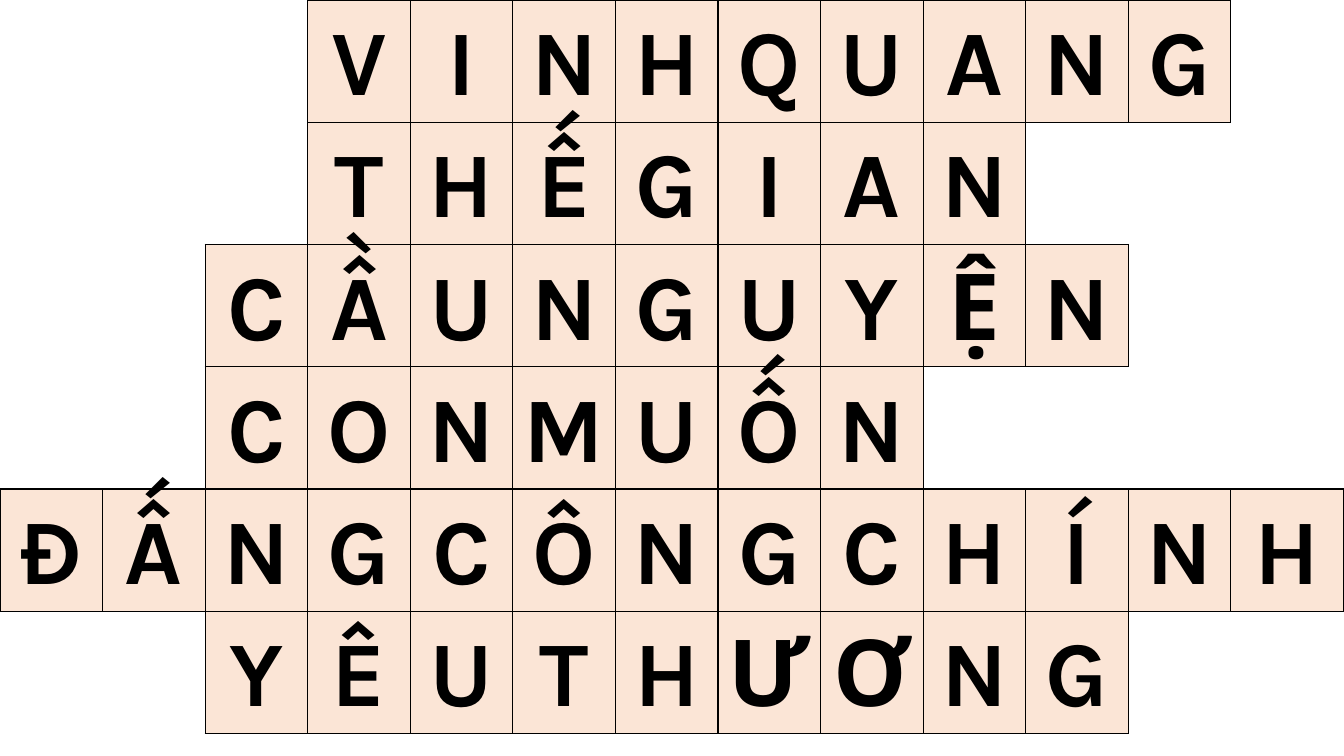
from dataclasses import dataclass

from lxml import etree
from pptx import Presentation
from pptx.dml.color import RGBColor
from pptx.enum.text import MSO_ANCHOR, PP_ALIGN
from pptx.oxml.ns import qn
from pptx.table import _Cell
from pptx.util import Inches, Pt

CENTER = PP_ALIGN.CENTER
MIDDLE = MSO_ANCHOR.MIDDLE


@dataclass(frozen=True)
class Theme:
    font: str = "Karla"
    letter_size: int = 66
    border_width: int = 1
    ink: str = "000000"
    letter_fill: str = "FBE5D6"
    blank_fill: str = "FFFFFF"


@dataclass(frozen=True)
class Answer:
    start: int  # first column used
    letters: str


THEME = Theme()
ANSWERS = [
    Answer(3, "VINHQUANG"),
    Answer(3, "THẾGIAN"),
    Answer(2, "CẦUNGUYỆN"),
    Answer(2, "CONMUỐN"),
    Answer(0, "ĐẤNGCÔNGCHÍNH"),
    Answer(2, "YÊUTHƯƠNG"),
]
SLIDE_W, SLIDE_H = 13.33, 7.5
TABLE_H = 7.28
COLS = 13
LAST_COL_W = 1.12
COL_W = (SLIDE_W - LAST_COL_W) / (COLS - 1)
ROW_H = TABLE_H / len(ANSWERS)
# Border tag -> row and column step to the neighbouring cell
SIDES = {"a:lnL": (0, -1), "a:lnR": (0, 1), "a:lnT": (-1, 0), "a:lnB": (1, 0)}


def letter_at(row: int, col: int) -> str:
    """Return the letter in a square, or an empty string."""
    if not 0 <= row < len(ANSWERS):
        return ""
    answer = ANSWERS[row]
    i = col - answer.start
    return answer.letters[i] if 0 <= i < len(answer.letters) else ""


def add_border(cell: _Cell, tag: str, visible: bool) -> None:
    ln = etree.SubElement(cell._tc.get_or_add_tcPr(), qn(tag))
    ln.set("w", str(Pt(THEME.border_width)))
    if visible:
        fill = etree.SubElement(ln, qn("a:solidFill"))
        etree.SubElement(fill, qn("a:srgbClr")).set("val", THEME.ink)
    else:
        etree.SubElement(ln, qn("a:noFill"))


def write_letter(cell: _Cell, letter: str) -> None:
    cell.vertical_anchor = MIDDLE
    cell.text_frame.text = letter
    p = cell.text_frame.paragraphs[0]
    p.alignment = CENTER
    p.line_spacing = 1.07
    p.space_after = Pt(8)
    font = p.runs[0].font
    font.name = THEME.font
    font.size = Pt(THEME.letter_size)
    font.bold = True
    font.color.rgb = RGBColor.from_string(THEME.ink)


def draw_square(cell: _Cell, row: int, col: int) -> None:
    letter = letter_at(row, col)
    cell.margin_left = cell.margin_right = Inches(0.07)
    cell.margin_top = cell.margin_bottom = 0

    # An edge shows when a letter stands on either side of it
    for tag, (down, right) in SIDES.items():
        add_border(cell, tag, bool(letter or letter_at(row + down, col + right)))

    cell.fill.solid()
    cell.fill.fore_color.rgb = RGBColor.from_string(
        THEME.letter_fill if letter else THEME.blank_fill)
    if letter:
        write_letter(cell, letter)


def main() -> None:
    prs = Presentation()
    prs.slide_width, prs.slide_height = Inches(SLIDE_W), Inches(SLIDE_H)
    s = prs.slides.add_slide(prs.slide_layouts[6])

    # Crossword grid
    table = s.shapes.add_table(len(ANSWERS), COLS, 0, 0,
                               Inches(SLIDE_W), Inches(TABLE_H)).table
    table.first_row = table.horz_banding = False
    for column in table.columns:
        column.width = Inches(COL_W)
    table.columns[COLS - 1].width = Inches(LAST_COL_W)

    # Squares
    for row in range(len(ANSWERS)):
        table.rows[row].height = Inches(ROW_H)
        for col in range(COLS):
            draw_square(table.cell(row, col), row, col)

    prs.save("out.pptx")


if __name__ == "__main__":
    main()
